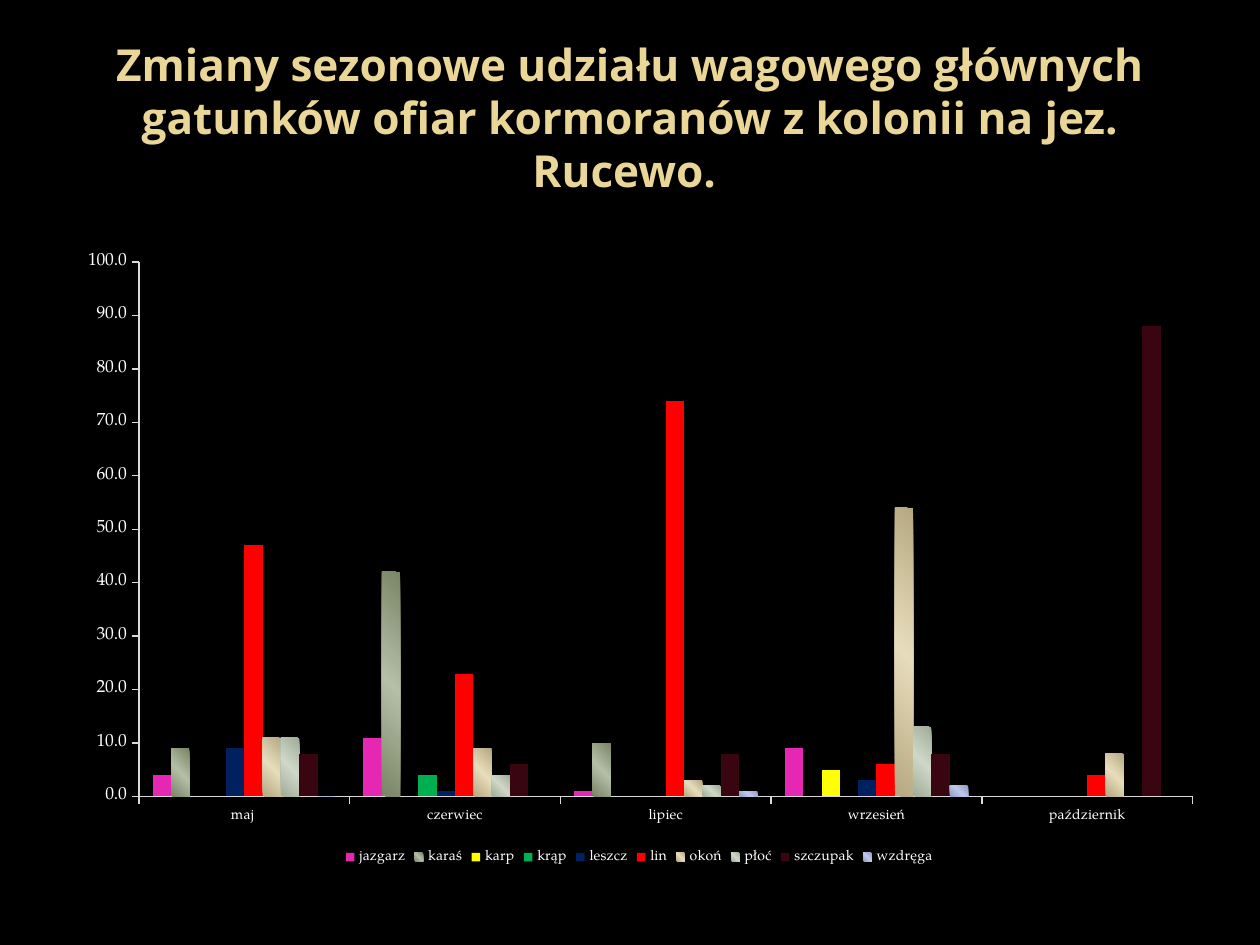
from copy import deepcopy

from lxml import etree
from pptx import Presentation
from pptx.chart.data import CategoryChartData
from pptx.dml.color import RGBColor
from pptx.enum.chart import XL_CHART_TYPE as CT, XL_LEGEND_POSITION as LP, XL_TICK_MARK as TM
from pptx.enum.text import MSO_ANCHOR, PP_ALIGN
from pptx.oxml.ns import qn
from pptx.util import Inches, Pt

MONTHS = ["maj ", "czerwiec", "lipiec", "wrzesień", "październik"]
SPECIES = [
    ("jazgarz", [4, 11, 1, 9, None], ["E527B3"]),
    ("karaś", [9, 42, 10, None, None], ["7A8566", "B5BFA7"]),
    ("karp", [None, None, None, 5, None], ["FFFF00"]),
    ("krąp", [None, 4, None, None, None], ["00B050"]),
    ("leszcz", [9, 1, None, 3, None], ["002060"]),
    ("lin", [47, 23, 74, 6, 4], ["FF0000"]),
    ("okoń", [11, 9, 3, 54, 8], ["B5A882", "E8DDBB"]),
    ("płoć", [11, 4, 2, 13, None], ["A0AC98", "CFD8C8"]),
    ("szczupak", [8, 6, 8, 8, 88], ["390511"]),
    ("wzdręga", [0, None, 1, 2, None], ["8F9CC8", "BFC9EA"]),
]


def rgb(value):
    """Turn a hex string into a colour."""
    return RGBColor.from_string(value)


def set_font(font, size, color, name, bold=False):
    """Format a font."""
    font.size, font.name, font.bold = Pt(size), name, bold
    font.color.rgb = rgb(color)


def add_text(slide, text, left, top, width, height, **fmt):
    """Add a centred, wrapped text box."""
    tf = slide.shapes.add_textbox(Inches(left), Inches(top), Inches(width), Inches(height)).text_frame
    tf.word_wrap, tf.vertical_anchor = True, MSO_ANCHOR.MIDDLE
    p = tf.paragraphs[0]
    p.alignment = PP_ALIGN.CENTER
    r = p.add_run()
    r.text = text
    set_font(r.font, **fmt)


def fill_series(series, colors):
    """Fill bars with one colour, or with a dark-light-dark gradient."""
    fill = series.format.fill
    if len(colors) == 1:
        fill.solid()
        fill.fore_color.rgb = rgb(colors[0])
        return
    fill.gradient()
    fill.gradient_angle = 45
    stops = series._element.find(".//" + qn("a:gsLst"))
    stops.append(deepcopy(stops[0]))
    for stop, color, position in zip(fill.gradient_stops, [*colors, colors[0]], [0, 0.5, 1]):
        stop.color.rgb, stop.position = rgb(color), position


def style_axis(axis, size):
    """Give an axis its line, ticks and font."""
    axis.has_major_gridlines = False
    axis.major_tick_mark = TM.OUTSIDE
    axis.format.line.color.rgb = rgb("D9D9D9")
    axis.format.line.width = Pt(0.75)
    set_font(axis.tick_labels.font, size, "FFFFFF", "TeX Gyre Pagella")


def place_plot(chart, **box):
    """Place the inner plot area by fractions of the chart."""
    plot_area = chart._chartSpace.chart.plotArea
    for old in plot_area.findall(qn("c:layout")):
        plot_area.remove(old)
    layout = etree.Element(qn("c:layout"))
    manual = etree.SubElement(layout, qn("c:manualLayout"))
    settings = {"layoutTarget": "inner", "xMode": "edge", "yMode": "edge", **box}
    for tag, value in settings.items():
        etree.SubElement(manual, qn("c:" + tag), val=str(value))
    plot_area.insert(0, layout)


def add_column_chart(slide, left, top, width, height):
    """Add the clustered columns of species by month."""
    data = CategoryChartData(number_format="0.0")
    data.categories = MONTHS
    for name, values, _ in SPECIES:
        data.add_series(name, values)
    chart = slide.shapes.add_chart(CT.COLUMN_CLUSTERED, Inches(left), Inches(top),
                                   Inches(width), Inches(height), data).chart
    chart.has_title = False
    set_font(chart.font, 10, "FFFFFF", "TeX Gyre Pagella")
    plot = chart.plots[0]
    plot.gap_width, plot.overlap, plot.vary_by_categories = 150, 0, False
    for series, (_, _, colors) in zip(plot.series, SPECIES):
        series.invert_if_negative = False
        fill_series(series, colors)
    style_axis(chart.category_axis, 8)
    axis = chart.value_axis
    style_axis(axis, 10)
    axis.minimum_scale, axis.maximum_scale, axis.major_unit = 0, 100, 10
    axis.tick_labels.number_format = "0.0"
    axis.tick_labels.number_format_is_linked = False
    chart.has_legend = True
    chart.legend.position, chart.legend.include_in_layout = LP.BOTTOM, False
    set_font(chart.legend.font, 8, "FFFFFF", "TeX Gyre Pagella")
    place_plot(chart, x=0.065, y=0.032, w=0.916, h=0.852)


def main():
    """Build and save the slide."""
    prs = Presentation()
    prs.slide_width, prs.slide_height = Inches(10), Inches(7.5)
    s = prs.slides.add_slide(prs.slide_layouts[6])
    s.background.fill.solid()
    s.background.fill.fore_color.rgb = rgb("000000")
    add_text(s, "Zmiany sezonowe udziału wagowego głównych gatunków ofiar kormoranów "
             "z kolonii na jez. Rucewo. ", 0.5, 0.3, 9, 1.25,
             size=25.2, color="EAD696", name="Open Sans", bold=True)
    add_column_chart(s, 0.51, 1.92, 9.13, 4.98)
    prs.save("out.pptx")


if __name__ == "__main__":
    main()
